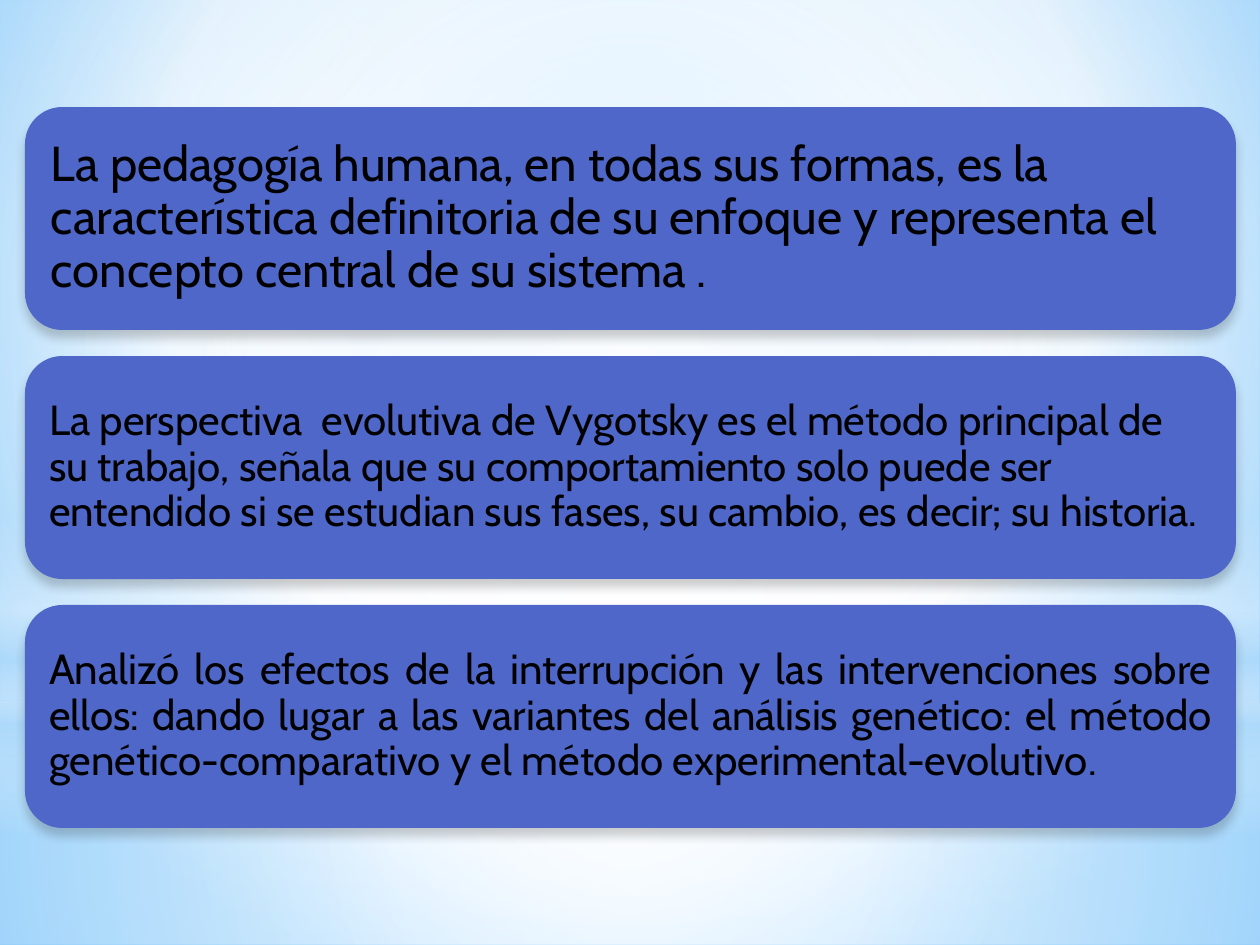
from dataclasses import dataclass

from lxml.etree import SubElement
from pptx import Presentation
from pptx.dml.color import RGBColor
from pptx.enum.shapes import MSO_SHAPE as SHAPE
from pptx.enum.text import MSO_ANCHOR as ANCHOR, PP_ALIGN as ALIGN
from pptx.oxml.ns import qn
from pptx.util import Pt

EMU_PER_PX = 914400 / 126
COLORS = {
    "white": "FFFFFF",
    "black": "000000",
    "card": "4E67C8",
    "mist": "B4DCFA",
    "sky": "9ED5FF",
    "azure": "5BB9FF",
}


@dataclass(frozen=True)
class Gradient:
    """Stops are (position %, colour, opacity %); without focus it runs downwards."""
    stops: tuple
    focus: tuple | None = (50, 50, 50, 50)


@dataclass(frozen=True)
class Glow:
    shape: SHAPE
    box: tuple[int, int, int, int]
    gradient: Gradient


@dataclass(frozen=True)
class Card:
    text: str
    size: int
    inset: int
    align: ALIGN = ALIGN.LEFT


BACKDROP = Gradient(((0, "sky", 100), (60, "white", 100), (100, "azure", 100)),
                    (20, 10, 20, 60))
GLOWS = (
    Glow(SHAPE.RECTANGLE, (0, 703, 1260, 242),
         Gradient(((0, "white", 91), (37, "white", 76), (100, "mist", 79)))),
    Glow(SHAPE.RECTANGLE, (0, 0, 1260, 703),
         Gradient(((0, "white", 89), (48, "white", 62), (100, "mist", 79)))),
    Glow(SHAPE.RECTANGLE, (0, 519, 1260, 315),
         Gradient(((0, "white", 0), (29, "white", 30), (45, "mist", 40),
                   (55, "white", 26), (65, "mist", 60), (100, "white", 0)), None)),
    Glow(SHAPE.OVAL, (0, 220, 1260, 703),
         Gradient(((0, "white", 100), (56, "white", 0)))),
)
CARDS = (
    Card("La pedagogía humana, en todas sus formas, es la característica definitoria "
         "de su enfoque y representa el concepto central de su sistema .", 28, 15),
    Card("La perspectiva  evolutiva de Vygotsky es el método principal de su trabajo, "
         "señala que su comportamiento solo puede ser entendido si se estudian sus "
         "fases, su cambio, es decir; su historia.", 24, 13),
    Card("Analizó los efectos de la interrupción y las intervenciones sobre ellos: "
         "dando lugar a las variantes del análisis genético: el método "
         "genético-comparativo y el método experimental-evolutivo.", 24, 13,
         ALIGN.JUSTIFY),
)
CARD_X, CARD_Y, CARD_W, CARD_H, CARD_PITCH = 25, 107, 1211, 223, 249
TEXT_MARGIN = 11


def px(*lengths: int) -> list[int]:
    return [round(n * EMU_PER_PX) for n in lengths]


def rgb(name: str) -> RGBColor:
    return RGBColor.from_string(COLORS[name])


def add_color(parent, name: str, opacity: int) -> None:
    clr = SubElement(parent, qn("a:srgbClr"), val=COLORS[name])
    if opacity < 100:
        SubElement(clr, qn("a:alpha"), val=str(opacity * 1000))


def set_gradient(props, gradient: Gradient) -> None:
    """Turn the solid fill held by props into a gradient."""
    solid = props.find(qn("a:solidFill"))
    grad = SubElement(props, qn("a:gradFill"), rotWithShape="1")
    props.replace(solid, grad)
    stops = SubElement(grad, qn("a:gsLst"))
    for pos, color, opacity in gradient.stops:
        add_color(SubElement(stops, qn("a:gs"), pos=str(pos * 1000)), color, opacity)
    if gradient.focus is None:
        SubElement(grad, qn("a:lin"), ang="5400000", scaled="0")
    else:
        path = SubElement(grad, qn("a:path"), path="circle")
        sides = {side: str(v * 1000) for side, v in zip("ltrb", gradient.focus)}
        SubElement(path, qn("a:fillToRect"), **sides)


def add_drop_shadow(sp) -> None:
    effects = sp.element.spPr.find(qn("a:effectLst"))
    shadow = SubElement(effects, qn("a:outerShdw"), blurRad=str(Pt(5)),
                        dist=str(Pt(4)), dir="5400000", algn="t", rotWithShape="0")
    add_color(shadow, "black", 20)


def add_shape(s, shape: SHAPE, box: tuple, color: str):
    sp = s.shapes.add_shape(shape, *px(*box))
    sp.shadow.inherit = False
    sp.fill.solid()
    sp.fill.fore_color.rgb = rgb(color)
    sp.line.fill.background()
    return sp


def add_text(s, text: str, *, box: tuple, size: int, inset: int, align: ALIGN,
             font: str = "Cabin", color: str = "black") -> None:
    tf = s.shapes.add_textbox(*px(*box)).text_frame
    tf.word_wrap = True
    tf.vertical_anchor = ANCHOR.MIDDLE
    tf.margin_left, tf.margin_top, tf.margin_right, tf.margin_bottom = px(*[inset] * 4)
    p = tf.paragraphs[0]
    p.alignment = align
    p.line_spacing = 0.9
    r = p.add_run()
    r.text = text
    r.font.name, r.font.size = font, Pt(size)
    r.font.color.rgb = rgb(color)


def add_card(s, card: Card, top: int) -> None:
    add_drop_shadow(add_shape(s, SHAPE.ROUNDED_RECTANGLE,
                              (CARD_X, top, CARD_W, CARD_H), "card"))
    box = (CARD_X + TEXT_MARGIN, top + TEXT_MARGIN,
           CARD_W - 2 * TEXT_MARGIN, CARD_H - 2 * TEXT_MARGIN)
    add_text(s, card.text, box=box, size=card.size, inset=card.inset, align=card.align)


def main() -> None:
    prs = Presentation()
    prs.slide_width, prs.slide_height = px(1260, 945)
    s = prs.slides.add_slide(prs.slide_layouts[6])
    s.background.fill.solid()
    set_gradient(s.element.find(".//" + qn("p:bgPr")), BACKDROP)
    for glow in GLOWS:
        sp = add_shape(s, glow.shape, glow.box, "white")
        set_gradient(sp.element.spPr, glow.gradient)
    for i, card in enumerate(CARDS):
        add_card(s, card, CARD_Y + i * CARD_PITCH)
    prs.save("out.pptx")


if __name__ == "__main__":
    main()
